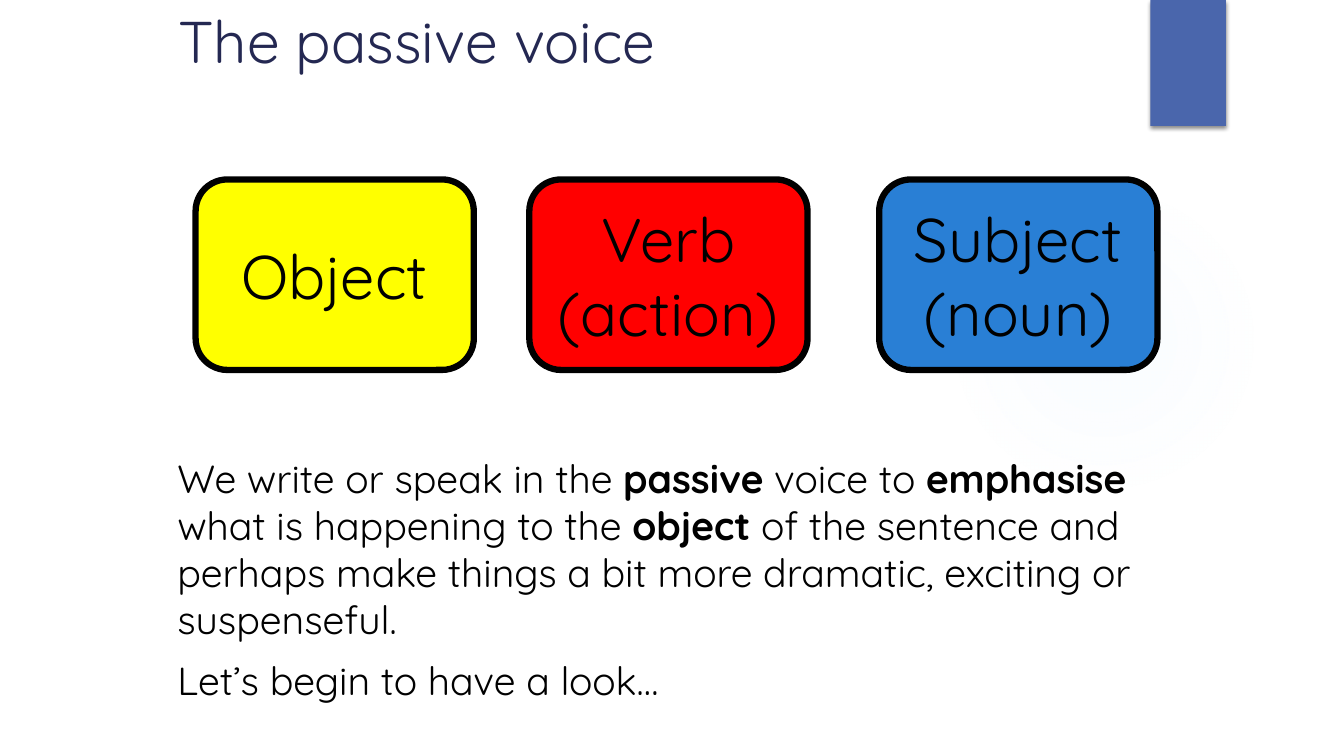
from pptx import Presentation
from pptx.dml.color import RGBColor
from pptx.enum.shapes import MSO_SHAPE
from pptx.enum.text import MSO_ANCHOR, PP_ALIGN
from pptx.oxml import parse_xml
from pptx.oxml.ns import nsdecls, qn
from pptx.util import Inches, Pt


class Theme:
    font = "Quicksand"
    navy = RGBColor.from_string("242852")
    black = RGBColor.from_string("000000")
    tab = RGBColor.from_string("4A66AC")
    blue = RGBColor.from_string("297FD5")
    red = RGBColor.from_string("FF0000")
    yellow = RGBColor.from_string("FFFF00")
    glow = "CDE0FB"
    title_size = Pt(42)
    card_size = Pt(44)
    body_size = Pt(28)


def style(para, size, color):
    para.font.name = Theme.font
    para.font.size = size
    para.font.color.rgb = color


def add_text_frame(left, top, width, height):
    box = page.shapes.add_textbox(Inches(left), Inches(top), Inches(width), Inches(height))
    box.text_frame.word_wrap = True
    return box.text_frame


deck = Presentation()
deck.slide_width = Inches(13.33)
deck.slide_height = Inches(7.5)
page = deck.slides.add_slide(deck.slide_layouts[6])

# Faint round glow, fading out from its centre
glow = page.shapes.add_shape(
    MSO_SHAPE.OVAL, Inches(9.41), Inches(1.83), Inches(3.08), Inches(3.08))
glow.shadow.inherit = False
glow.line.fill.background()
glow.fill.background()
stops = "".join(
    f'<a:gs pos="{position * 1000}"><a:srgbClr val="{Theme.glow}">'
    f'<a:alpha val="{opacity * 1000}"/></a:srgbClr></a:gs>'
    for position, opacity in [(0, 7), (36, 6), (69, 0)])
gradient = parse_xml(
    f'<a:gradFill {nsdecls("a")}><a:gsLst>{stops}</a:gsLst><a:path path="circle">'
    '<a:fillToRect l="50000" t="50000" r="50000" b="50000"/></a:path></a:gradFill>')
glow_properties = glow._element.spPr
glow_properties.replace(glow_properties.find(qn("a:noFill")), gradient)

# Corner tab with a soft shadow below
tab = page.shapes.add_shape(
    MSO_SHAPE.RECTANGLE, Inches(11.41), Inches(0), Inches(0.75), Inches(1.25))
tab.fill.solid()
tab.fill.fore_color.rgb = Theme.tab
tab.line.fill.background()
tab.shadow.inherit = False
tab._element.spPr.find(qn("a:effectLst")).append(parse_xml(
    f'<a:outerShdw {nsdecls("a")} blurRad="{Pt(3)}" dist="{Pt(2)}" dir="5400000" '
    'rotWithShape="0"><a:srgbClr val="000000"><a:alpha val="45000"/></a:srgbClr></a:outerShdw>'))

# Title
title = add_text_frame(1.67, 0, 10, 1.25).paragraphs[0]
title.text = "The passive voice"
style(title, Theme.title_size, Theme.navy)

# Explanation, with key words in bold
body = add_text_frame(1.66, 4.46, 10.01, 3.04)
explanation = body.paragraphs[0]
for text, bold in [
    ("We write or speak in the ", False),
    ("passive", True),
    (" voice to ", False),
    ("emphasise", True),
    (" what is happening to the ", False),
    ("object", True),
    (" of the sentence and perhaps make things a bit more dramatic, "
     "exciting or suspenseful.", False),
]:
    span = explanation.add_run()
    span.text = text
    span.font.bold = bold
invitation = body.add_paragraph()
invitation.text = "Let’s begin to have a look…"
invitation.space_before = Pt(10)
for para in body.paragraphs:
    style(para, Theme.body_size, Theme.black)

# Sentence-part cards
for label, left, color in [
    ("Object", 1.94, Theme.yellow),
    ("Verb (action)", 5.25, Theme.red),
    ("Subject (noun)", 8.72, Theme.blue),
]:
    card = page.shapes.add_shape(
        MSO_SHAPE.ROUNDED_RECTANGLE, Inches(left), Inches(1.78), Inches(2.76), Inches(1.89))
    card.shadow.inherit = False
    card.fill.solid()
    card.fill.fore_color.rgb = color
    card.line.color.rgb = Theme.black
    card.line.width = Pt(4.5)
    card.text_frame.word_wrap = True
    card.text_frame.vertical_anchor = MSO_ANCHOR.MIDDLE
    para = card.text_frame.paragraphs[0]
    para.text = label
    para.alignment = PP_ALIGN.CENTER
    style(para, Theme.card_size, Theme.black)

deck.save("out.pptx")
